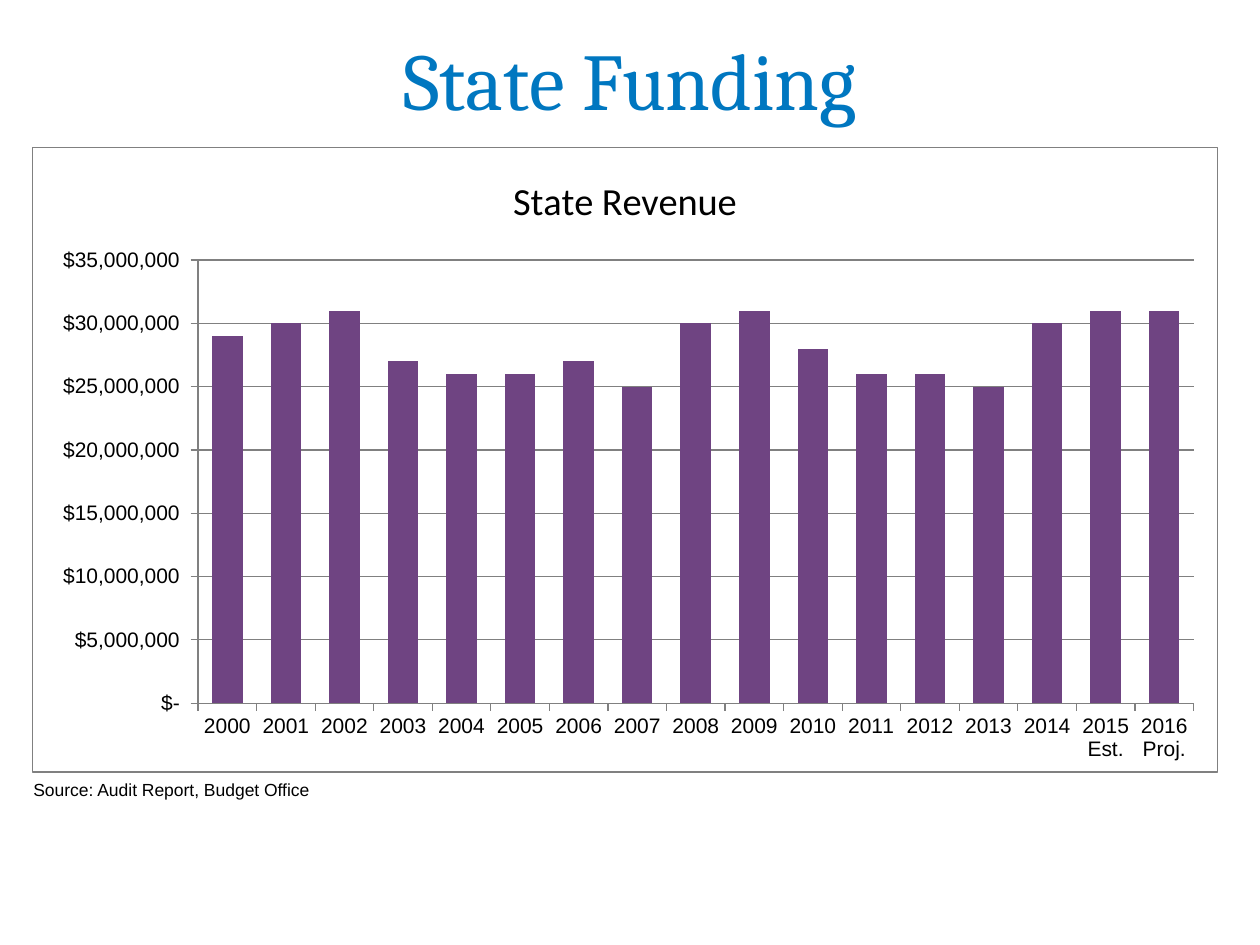
from typing import NamedTuple

from lxml.etree import SubElement
from pptx import Presentation
from pptx.chart.data import CategoryChartData
from pptx.dml.color import RGBColor
from pptx.enum.chart import XL_CHART_TYPE, XL_TICK_MARK
from pptx.enum.text import MSO_ANCHOR, PP_ALIGN
from pptx.oxml import parse_xml
from pptx.oxml.ns import nsdecls, qn
from pptx.util import Pt


class Box(NamedTuple):
    left: float
    top: float
    width: float
    height: float

    def points(self) -> list:
        return [Pt(v) for v in self]


MILLION = 1_000_000
YEARS = [str(y) for y in range(2000, 2015)] + ["2015 Est.", "2016 Proj."]
REVENUE = [29, 30, 31, 27, 26, 26, 27, 25, 30, 31, 28, 26, 26, 25, 30, 31, 31]
DOLLARS = '_("$"* #,##0_);_("$"* \\(#,##0\\);_("$"* "-"_);_(@_)'
GRAY = "808080"
PLOT = {"x": 0.14, "y": 0.18, "w": 0.84, "h": 0.71}


def color(value: str) -> RGBColor:
    return RGBColor.from_string(value)


def set_font(font, *, name="Arial", size=10, fill="000000") -> None:
    font.name = name
    font.size = Pt(size)
    font.bold = False
    font.color.rgb = color(fill)


def add_text(s, box: Box, text: str, *, align=PP_ALIGN.LEFT,
             anchor=MSO_ANCHOR.TOP, **font) -> None:
    tf = s.shapes.add_textbox(*box.points()).text_frame
    tf.word_wrap = True
    tf.vertical_anchor = anchor
    p = tf.paragraphs[0]
    p.alignment = align
    r = p.add_run()
    r.text = text
    set_font(r.font, **font)


def style_axis(axis, number_format: str) -> None:
    axis.major_tick_mark = XL_TICK_MARK.OUTSIDE
    axis.minor_tick_mark = XL_TICK_MARK.NONE
    axis.format.line.color.rgb = color(GRAY)
    axis.format.line.width = Pt(0.75)
    set_font(axis.tick_labels.font, size=12)
    axis.tick_labels.number_format = number_format
    axis.tick_labels.number_format_is_linked = False


def place_plot(chart) -> None:
    area = chart._chartSpace.chart.plotArea
    layout = area.find(qn("c:layout"))
    if layout is None:
        layout = parse_xml(f"<c:layout {nsdecls('c')}/>")
        area.insert(0, layout)
    manual = SubElement(layout, qn("c:manualLayout"))
    settings = {"layoutTarget": "inner", "xMode": "edge", "yMode": "edge"} | PLOT
    for tag, value in settings.items():
        SubElement(manual, qn(f"c:{tag}")).set("val", str(value))


def add_border(chart, line: str, width: float) -> None:
    border = parse_xml(
        f"<c:spPr {nsdecls('c', 'a')}>"
        '<a:solidFill><a:srgbClr val="FFFFFF"/></a:solidFill>'
        f'<a:ln w="{Pt(width)}"><a:solidFill><a:srgbClr val="{line}"/>'
        "</a:solidFill></a:ln></c:spPr>")
    chart._chartSpace.chart.addnext(border)


def add_revenue_chart(s, box: Box) -> None:
    data = CategoryChartData(number_format=DOLLARS)
    data.categories = YEARS
    data.add_series("Series 1", [v * MILLION for v in REVENUE])
    chart = s.shapes.add_chart(
        XL_CHART_TYPE.COLUMN_CLUSTERED, *box.points(), data).chart
    set_font(chart.font)
    chart.has_legend = False
    chart.has_title = True
    p = chart.chart_title.text_frame.paragraphs[0]
    r = p.add_run()
    r.text = "State Revenue"
    set_font(r.font, name="Calibri", size=22)
    chart.chart_title.include_in_layout = False

    style_axis(chart.category_axis, "General")
    values = chart.value_axis
    style_axis(values, DOLLARS)
    values.minimum_scale = 0
    values.maximum_scale = 35 * MILLION
    values.major_unit = 5 * MILLION
    values.has_major_gridlines = True
    grid = values.major_gridlines.format.line
    grid.color.rgb = color(GRAY)
    grid.width = Pt(0.75)

    plot = chart.plots[0]
    plot.gap_width = 92
    plot.vary_by_categories = False
    fill = plot.series[0].format.fill
    fill.solid()
    fill.fore_color.rgb = color("6F4482")
    place_plot(chart)
    add_border(chart, GRAY, 0.75)


def main() -> None:
    """Build the state funding slide."""
    prs = Presentation()
    prs.slide_width, prs.slide_height = Pt(720), Pt(540)
    s = prs.slides.add_slide(prs.slide_layouts[6])
    add_text(s, Box(0, 0, 720, 90), "State Funding", align=PP_ALIGN.CENTER,
             anchor=MSO_ANCHOR.MIDDLE, name="Cambria", size=46, fill="0077C0")
    add_text(s, Box(12, 441.5, 588, 19.5), "Source: Audit Report, Budget Office")
    add_revenue_chart(s, Box(18, 84, 678, 357.5))
    prs.save("out.pptx")


if __name__ == "__main__":
    main()
